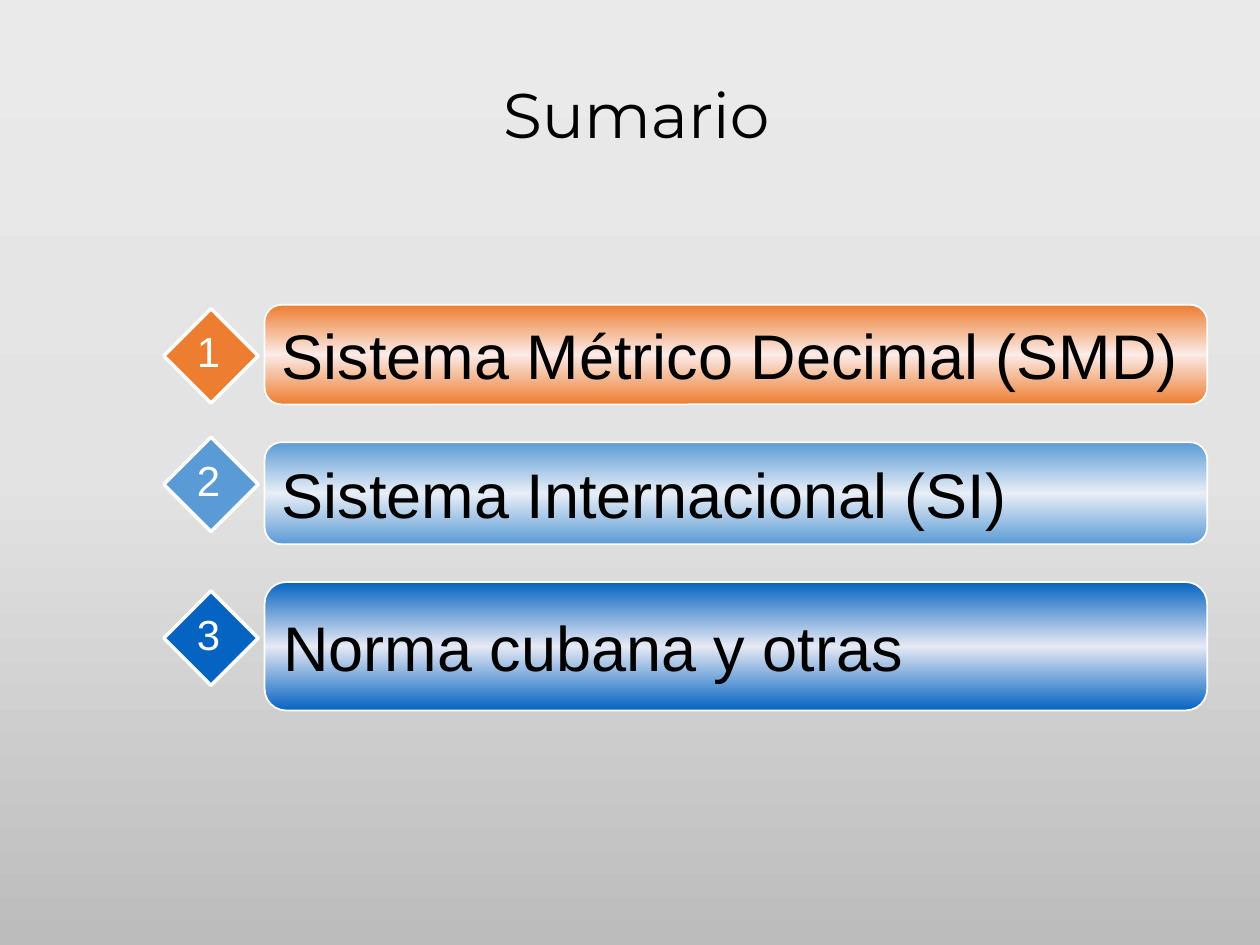
from dataclasses import dataclass
from lxml import etree
from pptx import Presentation
from pptx.dml.color import RGBColor
from pptx.enum.shapes import MSO_SHAPE
from pptx.enum.text import MSO_ANCHOR, MSO_AUTO_SIZE, PP_ALIGN
from pptx.oxml.ns import qn
from pptx.util import Pt

BAR, GEM = MSO_SHAPE.ROUNDED_RECTANGLE, MSO_SHAPE.DIAMOND
LEFT, CENTER = PP_ALIGN.LEFT, PP_ALIGN.CENTER
TOP, MIDDLE = MSO_ANCHOR.TOP, MSO_ANCHOR.MIDDLE
FIXED, GROW = MSO_AUTO_SIZE.NONE, MSO_AUTO_SIZE.SHAPE_TO_FIT_TEXT
WHITE, BLACK = "FEFEFE", "000000"


@dataclass
class Topic:
    text: str
    color: str
    glow: str
    top: float
    height: float
    gem: float


TOPICS = [
    Topic("Sistema Métrico Decimal (SMD)", "ED7D31", "FBEBE7", 174.2, 56.9, 176.4),
    Topic("Sistema Internacional (SI)", "5B9BD5", "E8EEF7", 252.7, 58.3, 249.8),
    Topic("Norma cubana y otras", "0563C1", "E6E9F4", 332.6, 73.4, 337.7),
]


def rgb(code: str) -> RGBColor:
    return RGBColor.from_string(code)


def blend(fill, root, colors: list[str]) -> None:
    """Fill from top to bottom with evenly spaced colours; root holds the fill."""
    fill.gradient()
    fill.gradient_angle = 270
    stops = next(root.iter(qn("a:gsLst")))
    for stop in list(stops):
        stops.remove(stop)
    for i, code in enumerate(colors):
        pos = str(100000 * i // (len(colors) - 1))
        stop = etree.SubElement(stops, qn("a:gs"), pos=pos)
        etree.SubElement(stop, qn("a:srgbClr"), val=code)


def write(shape, text: str, *, size=36, font="Arial", color=BLACK, align=LEFT,
          anchor=MIDDLE, wrap=False, fit=FIXED, space=1.0) -> None:
    frame = shape.text_frame
    frame.auto_size = fit
    frame.word_wrap = wrap
    frame.vertical_anchor = anchor
    para = frame.paragraphs[0]
    para.alignment = align
    para.line_spacing = space
    run = para.add_run()
    run.text = text
    run.font.size = Pt(size)
    run.font.name = font
    run.font.color.rgb = rgb(color)


def box(slide, x: float, y: float, w: float, h: float):
    return slide.shapes.add_textbox(Pt(x), Pt(y), Pt(w), Pt(h))


def form(slide, kind, x: float, y: float, w: float, h: float, line: float):
    shape = slide.shapes.add_shape(kind, Pt(x), Pt(y), Pt(w), Pt(h))
    shape.shadow.inherit = False
    shape.line.color.rgb = rgb(WHITE)
    shape.line.width = Pt(line)
    return shape


def draw(slide, num: int, topic: Topic) -> None:
    bar = form(slide, BAR, 151.2, topic.top, 538.6, topic.height, 1)
    bar.adjustments[0] = 0.167
    blend(bar.fill, bar.element, [topic.color, topic.glow, topic.color])
    write(bar, topic.text)

    gem = form(slide, GEM, 93.6, topic.gem, 54, 54, 2)
    gem.fill.solid()
    gem.fill.fore_color.rgb = rgb(topic.color)

    label = box(slide, 105.1, topic.gem + 6.3, 28.1, 36)
    write(label, str(num), size=24, color=WHITE, align=CENTER, anchor=TOP, fit=GROW)


def main() -> None:
    deck = Presentation()
    deck.slide_width, deck.slide_height = Pt(720), Pt(540)
    slide = deck.slides.add_slide(deck.slide_layouts[6])
    blend(slide.background.fill, slide.element, ["EBEAEA", "E4E3E3", "BDBCBC"])

    title = box(slide, 39.6, 22.3, 648, 90)
    write(title, "Sumario", font="Montserrat", align=CENTER, wrap=True, space=0.9)
    for num, topic in enumerate(TOPICS, 1):
        draw(slide, num, topic)
    deck.save("out.pptx")


if __name__ == "__main__":
    main()
